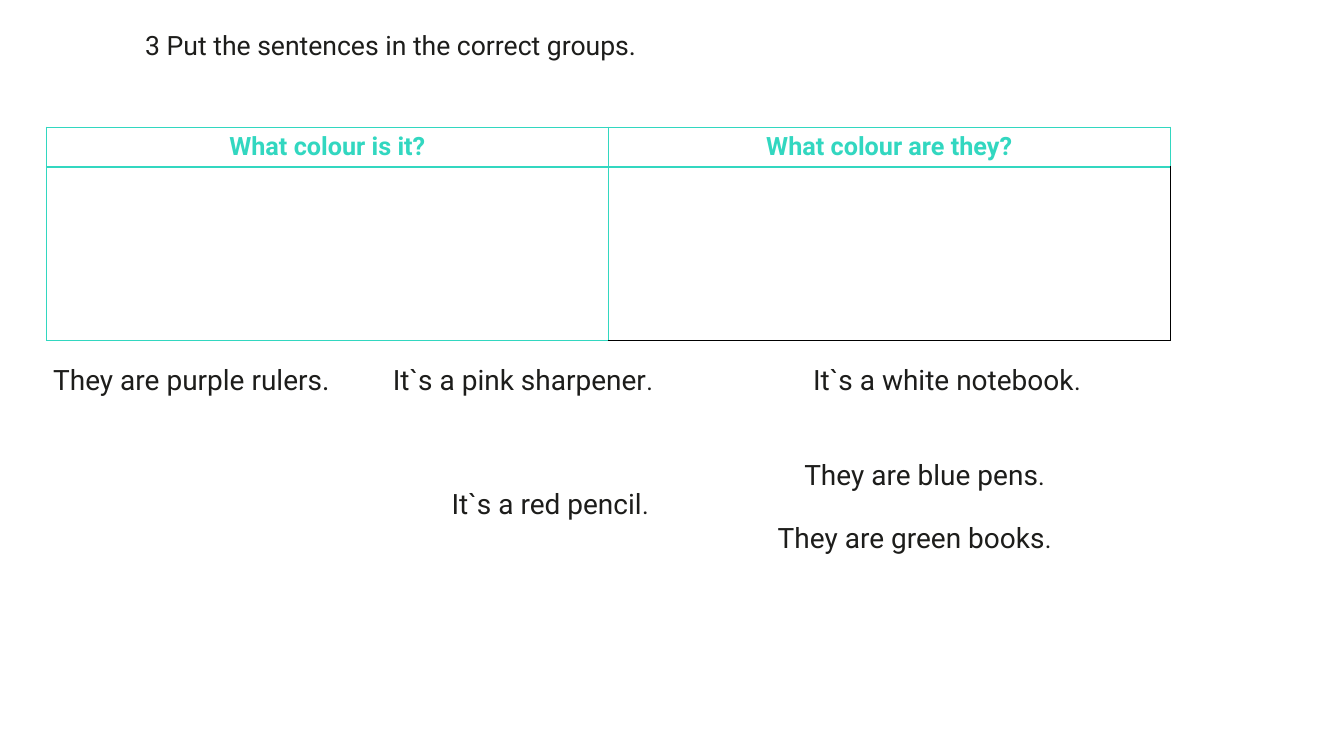
from lxml.etree import SubElement as Sub
from pptx import Presentation
from pptx.dml.color import RGBColor
from pptx.enum.text import MSO_ANCHOR as Anchor, MSO_AUTO_SIZE as Fit, PP_ALIGN as Align
from pptx.oxml.ns import qn
from pptx.util import Cm, Pt

TEAL = RGBColor(0x32, 0xD7, 0xC0)
INK = RGBColor(0x1D, 0x1D, 0x1B)
BLACK = RGBColor(0, 0, 0)
WHITE = RGBColor(255, 255, 255)


def write(para, text, size=20, color=INK, bold=False, face="Roboto"):
    run = para.add_run()
    run.text = text
    font = run.font
    font.name, font.size, font.bold = face, Pt(size), bold
    font.color.rgb = color


class Sheet:
    """Holds the current slide and the style of its boxes and grid."""

    inset = Cm(0.13)

    def __init__(self, slide):
        self.slide = slide

    def box(self, left, top, width, height=1.12):
        frame = self.slide.shapes.add_textbox(
            Cm(left), Cm(top), Cm(width), Cm(height)).text_frame
        frame.word_wrap = True
        return frame

    def title(self, text):
        frame = self.box(3.66, 0.61, 28.22, 1.85)
        frame.margin_left = frame.margin_right = 0
        frame.margin_top, frame.margin_bottom = Cm(0.12), Cm(0.18)
        write(frame.paragraphs[0], text, size=19)

    def phrase(self, text, left, top, width, dot=18):
        frame = self.box(left, top, width)
        frame.auto_size = Fit.SHAPE_TO_FIT_TEXT
        para = frame.paragraphs[0]
        write(para, text)
        write(para, ".", size=dot)

    def edge(self, cell, side, color, width):
        line = Sub(cell._tc.get_or_add_tcPr(), qn("a:ln" + side), w=str(Pt(width)))
        fill = Sub(line, qn("a:solidFill"))
        Sub(fill, qn("a:srgbClr"), val=str(color))

    def grid(self, heads, left, top, width, rows):
        count = len(heads)
        table = self.slide.shapes.add_table(
            len(rows), count, Cm(left), Cm(top), Cm(width), Cm(sum(rows))).table
        table.first_row = table.horz_banding = False
        for col in table.columns:
            col.width = Cm(width / count)
        for row, height in zip(table.rows, rows):
            row.height = Cm(height)
        for num, text in enumerate(heads):
            head, body = table.cell(0, num), table.cell(1, num)
            outer = BLACK if num == count - 1 else TEAL
            for side in "LRTB":
                self.edge(head, side, TEAL, 1.5 if side == "B" else 0.75)
                self.edge(body, side, outer if side in "RB" else TEAL,
                          1.5 if side == "T" else 0.75)
            head.fill.background()
            body.fill.background()
            head.vertical_anchor = Anchor.BOTTOM
            head.margin_left = head.margin_right = self.inset
            head.margin_top = head.margin_bottom = self.inset
            para = head.text_frame.paragraphs[0]
            para.alignment = Align.CENTER
            write(para, text, size=18, color=TEAL, bold=True)
        first = table.cell(1, 0).fill
        first.solid()
        first.fore_color.rgb = WHITE


def main():
    deck = Presentation()
    deck.slide_width, deck.slide_height = Cm(33.87), Cm(19.05)
    sheet = Sheet(deck.slides.add_slide(deck.slide_layouts[6]))
    sheet.grid(["What colour is it?", "What colour are they?"],
               1.17, 3.2, 28.32, [1.01, 4.37])
    sheet.title("3 Put the sentences in the correct groups.")
    line = 9.02
    sheet.phrase("They are purple rulers", 1.09, line, 19.3, dot=20)
    sheet.phrase("It`s a pink sharpener", 9.65, line, 10.52)
    sheet.phrase("It`s a white notebook", 20.24, line, 8.2)
    sheet.phrase("It`s a red pencil", 11.13, 12.14, 8.03)
    sheet.phrase("They are blue pens", 20.02, 11.4, 8.38)
    sheet.phrase("They are green books", 19.35, 12.98, 7.62)
    deck.save("out.pptx")


if __name__ == "__main__":
    main()
